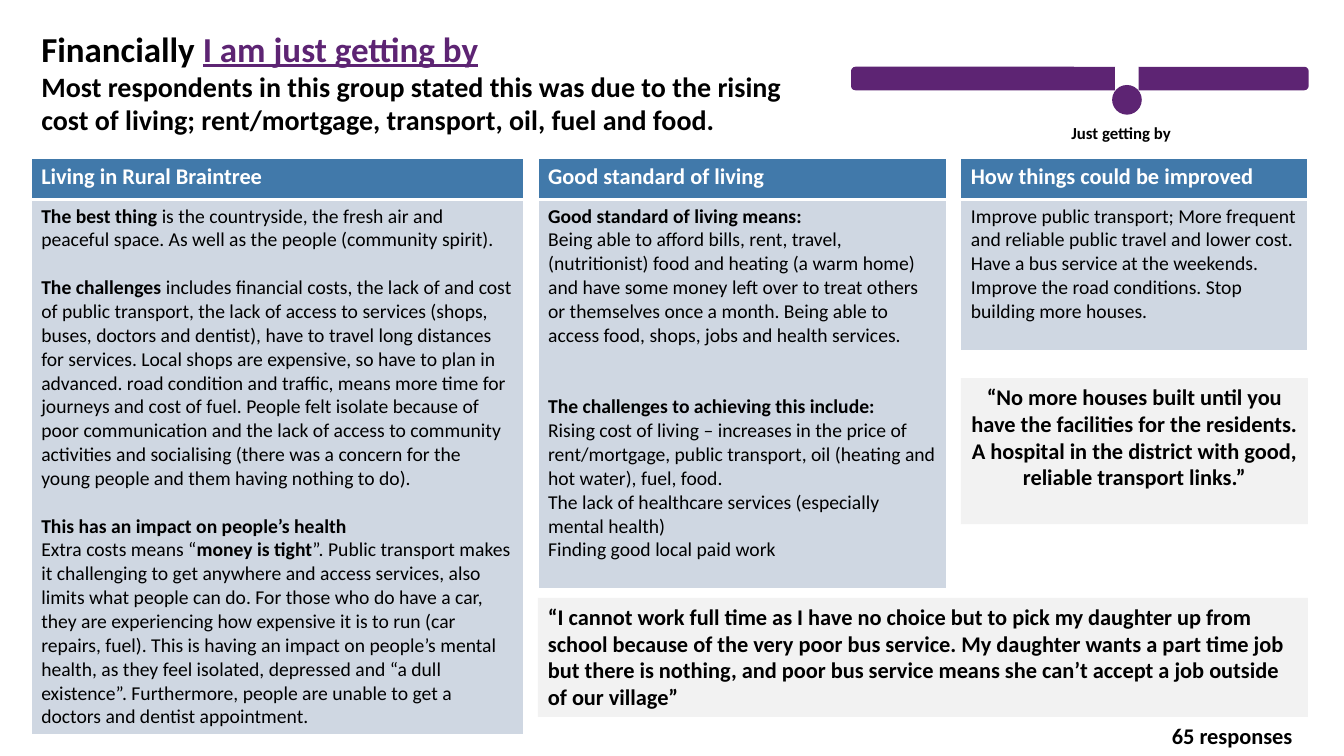
import dataclasses

import pptx
import pptx.dml.color
import pptx.enum.shapes
import pptx.enum.text
import pptx.oxml
import pptx.oxml.ns
import pptx.util

SHAPE = pptx.enum.shapes.MSO_SHAPE
ALIGN = pptx.enum.text.PP_ALIGN
ANCHOR = pptx.enum.text.MSO_ANCHOR


@dataclasses.dataclass(frozen=True)
class Theme:
    font: str = "Calibri"
    ink: str = "000000"
    white: str = "FFFFFF"
    purple: str = "5D2473"
    header: str = "4179AA"
    panel: str = "CFD7E2"
    quote: str = "F2F2F2"
    title_size: int = 25
    subtitle_size: int = 20
    heading_size: int = 16
    body_size: int = 14
    label_size: int = 12
    blank_line: int = 17  # height of one body line, in points


class Page:
    """Places elements on a grid of 96 columns by 54 rows."""

    def __init__(self, deck, theme):
        self.theme = theme
        self.column = deck.slide_width / 96
        self.row = deck.slide_height / 54
        self.slide = deck.slides.add_slide(deck.slide_layouts[5])

    def box(self, left, top, width, height):
        return (round(left * self.column), round(top * self.row),
                round(width * self.column), round(height * self.row))

    def rgb(self, colour):
        return pptx.dml.color.RGBColor.from_string(colour)

    def run(self, paragraph, text, size, colour=None, bold=True, underline=False):
        run = paragraph.add_run()
        run.text = text
        font = run.font
        font.name, font.size = self.theme.font, pptx.util.Pt(size)
        font.bold, font.underline = bold, underline
        font.color.rgb = self.rgb(colour or self.theme.ink)

    def title(self, lines, *place):
        """Each line is a list of (text, size, colour, underline)."""
        title = self.slide.shapes.title
        title.left, title.top, title.width, title.height = self.box(*place)
        frame = title.text_frame
        frame.auto_size = pptx.enum.text.MSO_AUTO_SIZE.NONE
        frame.vertical_anchor = ANCHOR.TOP
        frame.margin_bottom = 0
        for index, runs in enumerate(lines):
            paragraph = frame.add_paragraph() if index else frame.paragraphs[0]
            paragraph.alignment = ALIGN.LEFT
            for text, size, colour, underline in runs:
                self.run(paragraph, text, size, colour, underline=underline)

    def shape(self, kind, colour, *place, outlined=False):
        shape = self.slide.shapes.add_shape(kind, *self.box(*place))
        shape.shadow.inherit = False
        shape.fill.solid()
        shape.fill.fore_color.rgb = self.rgb(colour)
        if outlined:
            shape.line.color.rgb = self.rgb(colour)
            shape.line.width = pptx.util.Pt(1)
        else:
            shape.line.fill.background()
        return shape

    def caption(self, frame, text, size, align=ALIGN.LEFT):
        frame.word_wrap = True
        frame.vertical_anchor = ANCHOR.TOP
        frame.paragraphs[0].alignment = align
        self.run(frame.paragraphs[0], text, size)

    def quote(self, text, *place, align=ALIGN.LEFT):
        panel = self.shape(SHAPE.RECTANGLE, self.theme.quote, *place)
        self.caption(panel.text_frame, text, self.theme.heading_size, align)

    def label(self, text, size, *place, align=ALIGN.LEFT):
        label = self.slide.shapes.add_textbox(*self.box(*place))
        self.caption(label.text_frame, text, size, align)

    def style_cell(self, cell, colour, thick_side):
        cell.fill.solid()
        cell.fill.fore_color.rgb = self.rgb(colour)
        properties = cell._tc.get_or_add_tcPr()
        for index, side in enumerate("LRTB"):
            width = pptx.util.Pt(3 if side == thick_side else 1)
            properties.insert(index, pptx.oxml.parse_xml(
                f'<a:ln{side} {pptx.oxml.ns.nsdecls("a")} w="{width}"><a:solidFill>'
                f'<a:srgbClr val="{self.theme.white}"/></a:solidFill></a:ln{side}>'))

    def topic(self, heading, paragraphs, left, top, width, height):
        """Each paragraph is (blank lines before, [(text, bold), ...])."""
        theme = self.theme
        table = self.slide.shapes.add_table(
            2, 1, *self.box(left, top, width, height)).table
        header_rows = 2.95
        table.rows[0].height = round(header_rows * self.row)
        table.rows[1].height = round((height - header_rows) * self.row)
        header, body = table.cell(0, 0), table.cell(1, 0)
        self.style_cell(header, theme.header, "B")
        self.style_cell(body, theme.panel, "T")
        self.run(header.text_frame.paragraphs[0], heading,
                 theme.heading_size, theme.white)
        frame = body.text_frame
        for index, (blanks, runs) in enumerate(paragraphs):
            paragraph = frame.add_paragraph() if index else frame.paragraphs[0]
            paragraph.space_before = pptx.util.Pt(blanks * theme.blank_line)
            for text, bold in runs:
                self.run(paragraph, text, theme.body_size, bold=bold)


LIVING = [
    (0, [("The best thing ", True),
         ("is the countryside, the fresh air and peaceful space. As well as the "
          "people (community spirit).", False)]),
    (1, [("The challenges ", True),
         ("includes financial costs, the lack of and cost of public transport, the "
          "lack of access to services (shops, buses, doctors and dentist), have to "
          "travel long distances for services. Local shops are expensive, so have to "
          "plan in advanced. road condition and traffic, means more time for journeys "
          "and cost of fuel. People felt isolate because of poor communication and the "
          "lack of access to community activities and socialising (there was a concern "
          "for the young people and them having nothing to do).", False)]),
    (1, [("This has an impact on people’s health", True)]),
    (0, [("Extra costs means “", False), ("money is tight", True),
         ("”. Public transport makes it challenging to get anywhere and access "
          "services, also limits what people can do. For those who do have a car, they "
          "are experiencing how expensive it is to run (car repairs, fuel). This is "
          "having an impact on people’s mental health, as they feel isolated, depressed "
          "and “a dull existence”. Furthermore, people are unable to get a doctors and "
          "dentist appointment.", False)]),
]
STANDARD = [
    (0, [("Good standard of living means:", True)]),
    (0, [("Being able to afford bills, rent, travel, (nutritionist) food and heating "
          "(a warm home) and have some money left over to treat others or themselves "
          "once a month. Being able to access food, shops, jobs and health services.",
          False)]),
    (2, [("The challenges to achieving this include:", True)]),
    (0, [("Rising cost of living – increases in the price of rent/mortgage, public "
          "transport, oil (heating and hot water), fuel, food.", False)]),
    (0, [("The lack of healthcare services (especially mental health)", False)]),
    (0, [("Finding good local paid work", False)]),
]
IMPROVEMENTS = [
    (0, [("Improve public transport; More frequent and reliable public travel and lower "
          "cost. Have a bus service at the weekends. Improve the road conditions. Stop "
          "building more houses.", False)]),
]


def main():
    deck = pptx.Presentation()
    deck.slide_width = pptx.util.Inches(13.33)
    deck.slide_height = pptx.util.Inches(7.5)
    theme = Theme()
    page = Page(deck, theme)
    margin, gutter, topics_top = 2.23, 1, 11.3

    # Title and summary
    page.title([
        [("Financially ", theme.title_size, theme.ink, False),
         ("I am just getting by", theme.title_size, theme.purple, True)],
        [("Most respondents in this group stated this was due to the rising cost of "
          "living; rent/mortgage, transport, oil, fuel and food.",
          theme.subtitle_size, theme.ink, False)],
    ], margin, 1.58, 55.3, 5.83)

    # Topic columns
    left, lefts = margin, []
    for heading, paragraphs, width, height in (
            ("Living in Rural Braintree", LIVING, 35.2, 40.6),
            ("Good standard of living", STANDARD, 29.2, 30.74),
            ("How things could be improved", IMPROVEMENTS, 24.8, 13.75)):
        page.topic(heading, paragraphs, left, topics_top, width, height)
        lefts.append(left)
        left += width + gutter
    right = left - gutter

    # Slider marking the group's position
    track_left = 60.84
    page.shape(SHAPE.ROUNDED_RECTANGLE, theme.purple,
               track_left, 4.82, right - track_left, 1.58, outlined=True)
    page.shape(SHAPE.ROUNDED_RECTANGLE, theme.white, 79.7, 4.54, 1.58, 4.25, outlined=True)
    page.shape(SHAPE.OVAL, theme.purple, 79.49, 6.12, 2.02, 2.02, outlined=True)
    page.label("Just getting by", theme.label_size, 75.82, 8.42, 10.94, 2.16)

    # Quotes
    page.quote("“I cannot work full time as I have no choice but to pick my daughter up "
               "from school because of the very poor bus service. My daughter wants a part "
               "time job but there is nothing, and poor bus service means she can’t accept "
               "a job outside of our village”", lefts[1], 42.7, right - lefts[1], 8.5)
    page.quote("“No more houses built until you have the facilities for the residents. A "
               "hospital in the district with good, reliable transport links.”",
               lefts[2], 27, right - lefts[2], 10.44, align=ALIGN.CENTER)

    # Response count
    page.label("65 responses", theme.heading_size, 76.25, 51.2, 16.78, 2.66,
               align=ALIGN.RIGHT)

    deck.save("out.pptx")


if __name__ == "__main__":
    main()
